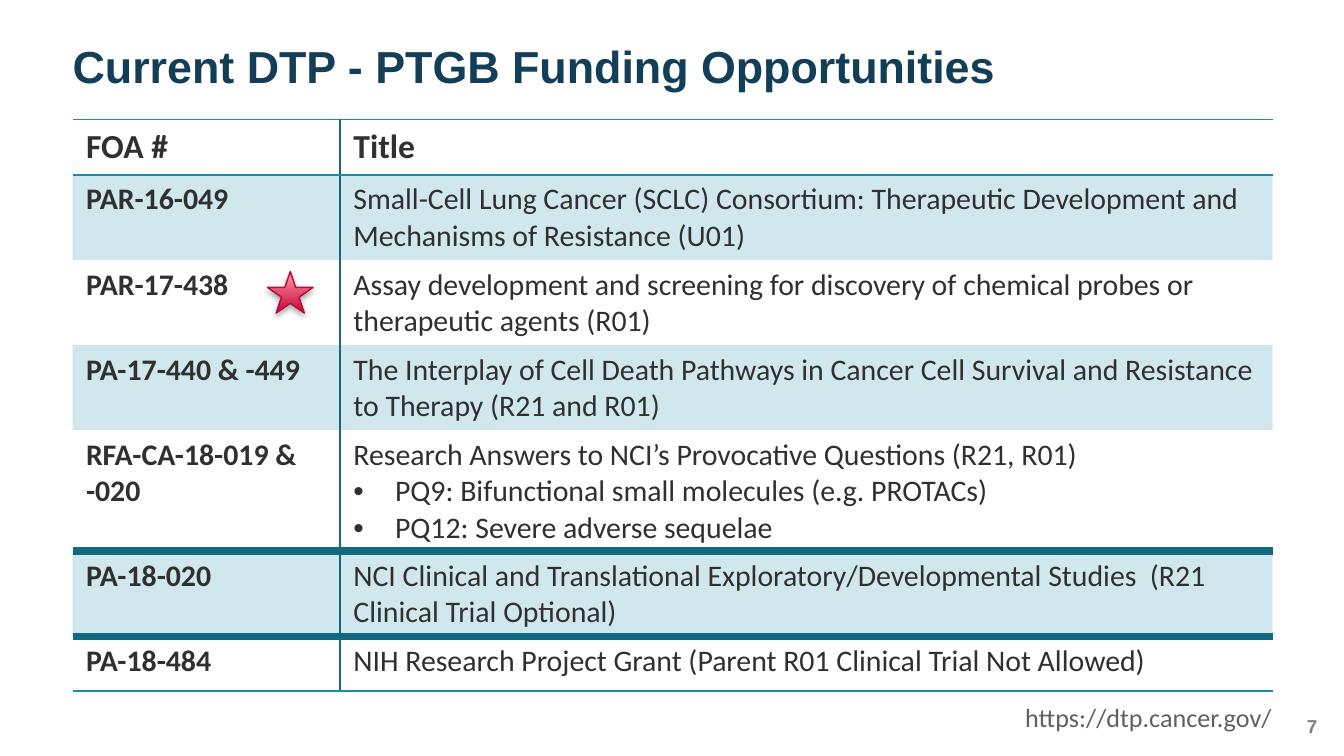
from dataclasses import dataclass, field

from lxml.etree import SubElement
from pptx import Presentation
from pptx.dml.color import RGBColor as Rgb
from pptx.enum.shapes import MSO_SHAPE as Shape
from pptx.enum.text import MSO_ANCHOR as Anchor, MSO_AUTO_SIZE as AutoSize, PP_ALIGN as Align
from pptx.oxml.ns import qn
from pptx.util import Inches, Pt


@dataclass(frozen=True)
class Theme:
    """Colours, fonts and type sizes of the slide."""
    heading_font: str = "Arial"
    body_font: str = "Calibri"
    navy: str = "123E57"
    ink: str = "303030"
    gray: str = "606060"
    number_gray: str = "7F7F7F"
    teal: str = "178DA9"
    dark_teal: str = "116A7F"
    star_dark: str = "C90037"
    star_light: str = "FF9EA6"
    star_line: str = "BB093A"
    shadow: str = "000000"
    sizes: dict = field(default_factory=lambda: {
        "title": 24, "header": 18, "body": 16, "link": 14, "number": 10})


HEADER = ("FOA #", ["Title"])
OPPORTUNITIES = [
    ("PAR-16-049", ["Small-Cell Lung Cancer (SCLC) Consortium: Therapeutic Development and "
                    "Mechanisms of Resistance (U01)"]),
    ("PAR-17-438", ["Assay development and screening for discovery of chemical probes or "
                    "therapeutic agents (R01)"]),
    ("PA-17-440 & -449", ["The Interplay of Cell Death Pathways in Cancer Cell Survival and "
                          "Resistance to Therapy (R21 and R01)"]),
    ("RFA-CA-18-019 & -020", ["Research Answers to NCI’s Provocative Questions (R21, R01)",
                              "PQ9: Bifunctional small molecules (e.g. PROTACs)",
                              "PQ12: Severe adverse sequelae"]),
    ("PA-18-020", ["NCI Clinical and Translational Exploratory/Developmental Studies  "
                   "(R21 Clinical Trial Optional)"]),
    ("PA-18-484", ["NIH Research Project Grant (Parent R01 Clinical Trial Not Allowed)"]),
]


class SlideBuilder:
    """Holds the theme and the current slide and draws each kind of element."""

    def __init__(self, slide, theme):
        """Keep the slide and its theme."""
        self.slide = slide
        self.theme = theme

    def add_run(self, paragraph, text, size, color, bold=False, font=None):
        """Add one styled run to a paragraph."""
        run = paragraph.add_run()
        run.text = text
        run.font.name = font or self.theme.body_font
        run.font.size = Pt(self.theme.sizes[size])
        run.font.bold = bold
        run.font.color.rgb = Rgb.from_string(color)

    def clear_margins(self, frame):
        """Remove the insets of a text frame."""
        frame.margin_left = frame.margin_right = frame.margin_top = frame.margin_bottom = 0

    def title(self, text, left, top, width, height):
        """Place and fill the title placeholder."""
        shape = self.slide.shapes.title
        shape.left, shape.top = Inches(left), Inches(top)
        shape.width, shape.height = Inches(width), Inches(height)
        frame = shape.text_frame
        self.clear_margins(frame)
        frame.auto_size = AutoSize.NONE
        frame.vertical_anchor = Anchor.BOTTOM
        paragraph = frame.paragraphs[0]
        paragraph.alignment = Align.LEFT
        paragraph.line_spacing = 0.9
        self.add_run(paragraph, text, "title", self.theme.navy, True, self.theme.heading_font)

    def text_box(self, left, top, width, height):
        """Add an empty text box and return its text frame."""
        box = self.slide.shapes.add_textbox(
            Inches(left), Inches(top), Inches(width), Inches(height))
        return box.text_frame

    def link(self, text, left, top, width, height):
        """Add the web address below the table."""
        frame = self.text_box(left, top, width, height)
        frame.word_wrap = False
        frame.auto_size = AutoSize.SHAPE_TO_FIT_TEXT
        self.add_run(frame.paragraphs[0], text, "link", self.theme.gray)

    def page_number(self, text, left, top, width, height):
        """Add the right-aligned page number."""
        frame = self.text_box(left, top, width, height)
        frame.word_wrap = True
        self.clear_margins(frame)
        paragraph = frame.paragraphs[0]
        paragraph.alignment = Align.RIGHT
        self.add_run(paragraph, text, "number", self.theme.number_gray, True,
                     self.theme.heading_font)

    def bullet(self, paragraph, indent):
        """Give a paragraph a round bullet and a hanging indent."""
        properties = paragraph._p.get_or_add_pPr()
        properties.set("marL", str(Inches(indent)))
        properties.set("indent", str(-Inches(indent)))
        SubElement(properties, qn("a:buFont"), typeface="Arial")
        SubElement(properties, qn("a:buChar"), char="•")

    def shade(self, cell, shaded):
        """Tint a cell with translucent teal or leave it clear."""
        if not shaded:
            cell.fill.background()
            return
        cell.fill.solid()
        cell.fill.fore_color.rgb = Rgb.from_string(self.theme.teal)
        color = next(cell._tc.tcPr.iter(qn("a:srgbClr")))
        SubElement(color, qn("a:alpha"), val="20000")

    def borders(self, cell, edges):
        """Draw the given cell edges, in the order left, right, top, bottom."""
        properties = cell._tc.get_or_add_tcPr()
        present = [(tag, edge) for tag, edge in zip(("lnL", "lnR", "lnT", "lnB"), edges) if edge]
        for position, (tag, (color, width)) in enumerate(present):
            line = SubElement(properties, qn(f"a:{tag}"), w=str(Pt(width)))
            fill = SubElement(line, qn("a:solidFill"))
            SubElement(fill, qn("a:srgbClr"), val=color)
            properties.insert(position, line)

    def fill_cell(self, cell, lines, size, bold):
        """Write the first line plain and any further lines as bullets."""
        frame = cell.text_frame
        for index, text in enumerate(lines):
            paragraph = frame.add_paragraph() if index else frame.paragraphs[0]
            if index:
                self.bullet(paragraph, 0.31)
            self.add_run(paragraph, text, size, self.theme.ink, bold)

    def table(self, header, records, left, top, widths, height, row_height):
        """Add the table with tinted alternate rows and ruled edges."""
        rows = [header, *records]
        shape = self.slide.shapes.add_table(
            len(rows), len(widths), Inches(left), Inches(top), Inches(sum(widths)), Inches(height))
        table = shape.table
        table.horz_banding = False
        style = next(shape.element.iter(qn("a:tableStyleId")))
        style.text = "{2D5ABB26-0587-4C30-8999-92F81FD0307C}"
        for column, width in zip(table.columns, widths):
            column.width = Inches(width)
        thin, thick = (self.theme.teal, 1), (self.theme.dark_teal, 4.5)
        divider = (self.theme.dark_teal, 1)
        top_rules = {0: thin, 5: thick}
        bottom_rules = {0: thin, 4: thick, 6: thin}
        for index, (number, lines) in enumerate(rows):
            table.rows[index].height = Inches(row_height)
            size = "body" if index else "header"
            for column, content in enumerate(([number], lines)):
                cell = table.cell(index, column)
                self.fill_cell(cell, content, size, column == 0 or index == 0)
                self.shade(cell, index % 2 == 1)
                sides = (None, divider) if column == 0 else (divider, None)
                self.borders(cell, (*sides, top_rules.get(index), bottom_rules.get(index)))
        shape.height = Inches(height)

    def star(self, left, top, width, height):
        """Add the gradient star with a soft shadow."""
        shape = self.slide.shapes.add_shape(
            Shape.STAR_5_POINT, Inches(left), Inches(top), Inches(width), Inches(height))
        shape.fill.gradient()
        shape.fill.gradient_angle = 90
        for stop, color in zip(shape.fill.gradient_stops,
                               (self.theme.star_dark, self.theme.star_light)):
            stop.color.rgb = Rgb.from_string(color)
        shape.line.color.rgb = Rgb.from_string(self.theme.star_line)
        shape.line.width = Pt(0.75)
        shape.shadow.inherit = False
        effects = next(shape.element.iter(qn("a:effectLst")))
        shadow = SubElement(effects, qn("a:outerShdw"), blurRad=str(Pt(3.1)), dist=str(Pt(1.8)),
                            dir="5400000", rotWithShape="0")
        color = SubElement(shadow, qn("a:srgbClr"), val=self.theme.shadow)
        SubElement(color, qn("a:alpha"), val="35000")


def main():
    """Build and save the funding slide."""
    presentation = Presentation()
    presentation.slide_width = Inches(10)
    presentation.slide_height = Inches(10) * 9 // 16
    slide = presentation.slides.add_slide(presentation.slide_layouts.get_by_name("Title Only"))
    builder = SlideBuilder(slide, Theme())
    builder.page_number("7", 9.46, 5.32, 0.34, 0.2)
    builder.title("Current DTP - PTGB Funding Opportunities", 0.54, 0.34, 8.93, 0.35)
    builder.table(HEADER, OPPORTUNITIES, 0.54, 0.89, (1.99, 6.94), 4.3, 0.41)
    builder.star(1.99, 2.02, 0.34, 0.31)
    builder.link("https://dtp.cancer.gov/", 7.53, 5.17, 2.06, 0.34)
    presentation.save("out.pptx")


if __name__ == "__main__":
    main()
